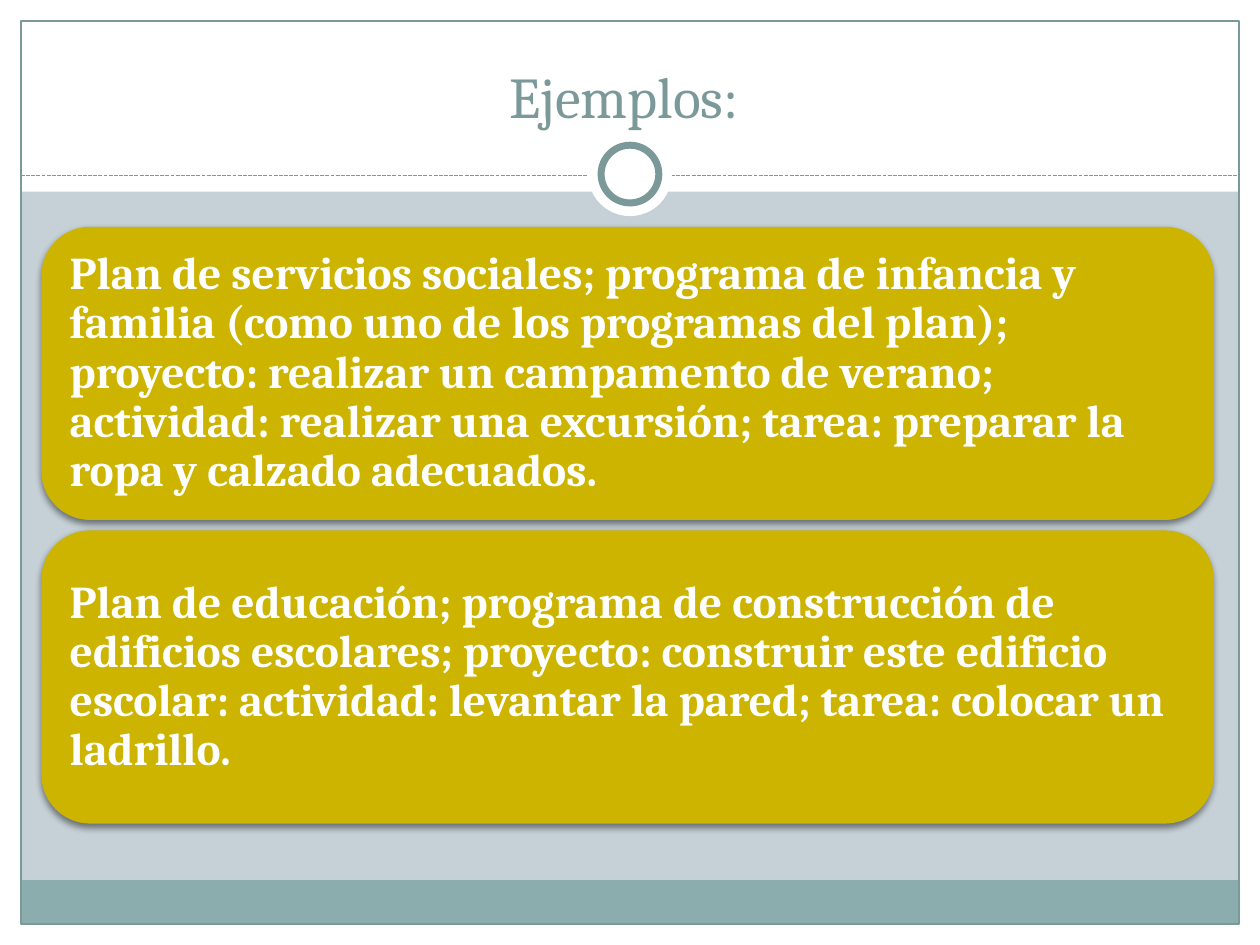
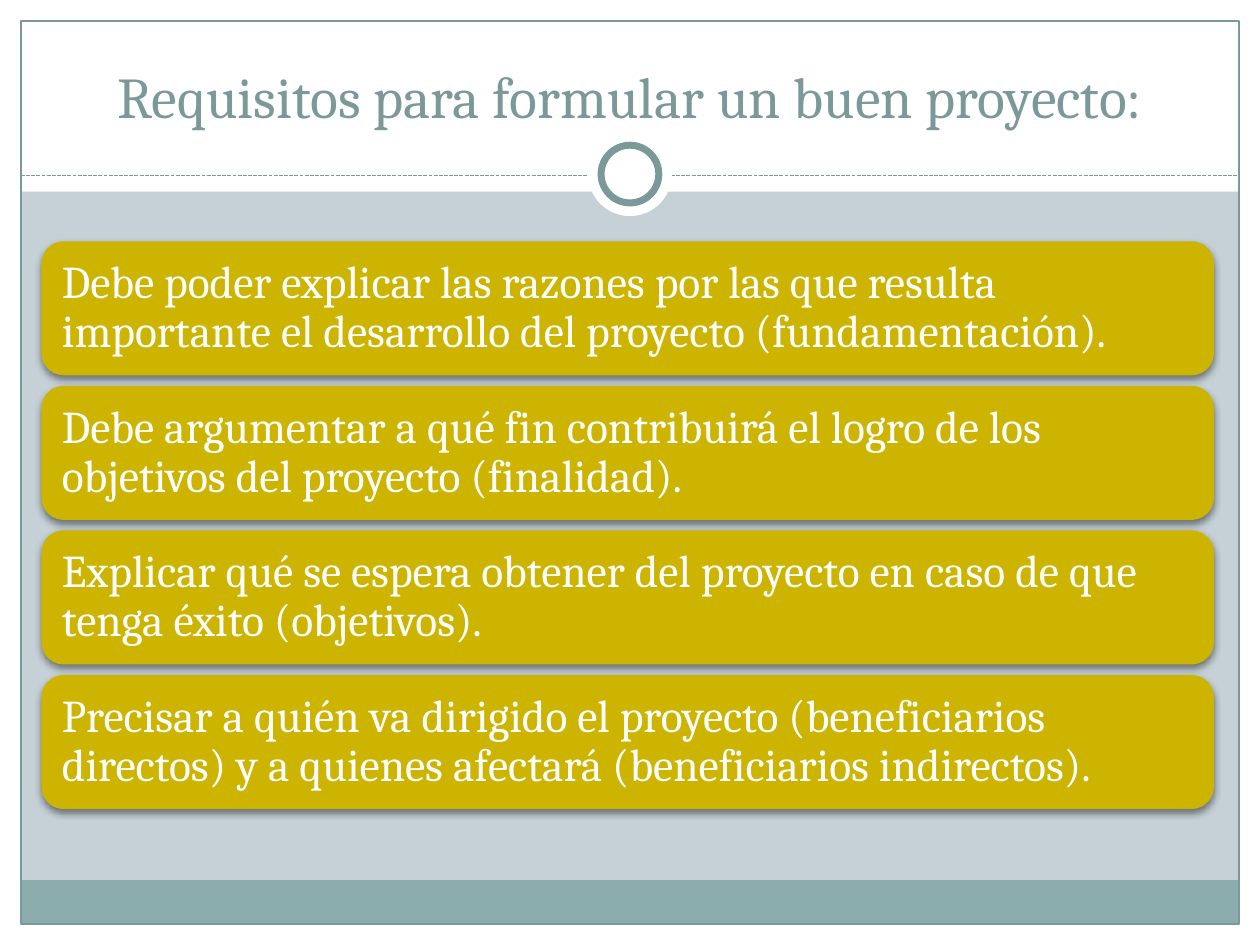
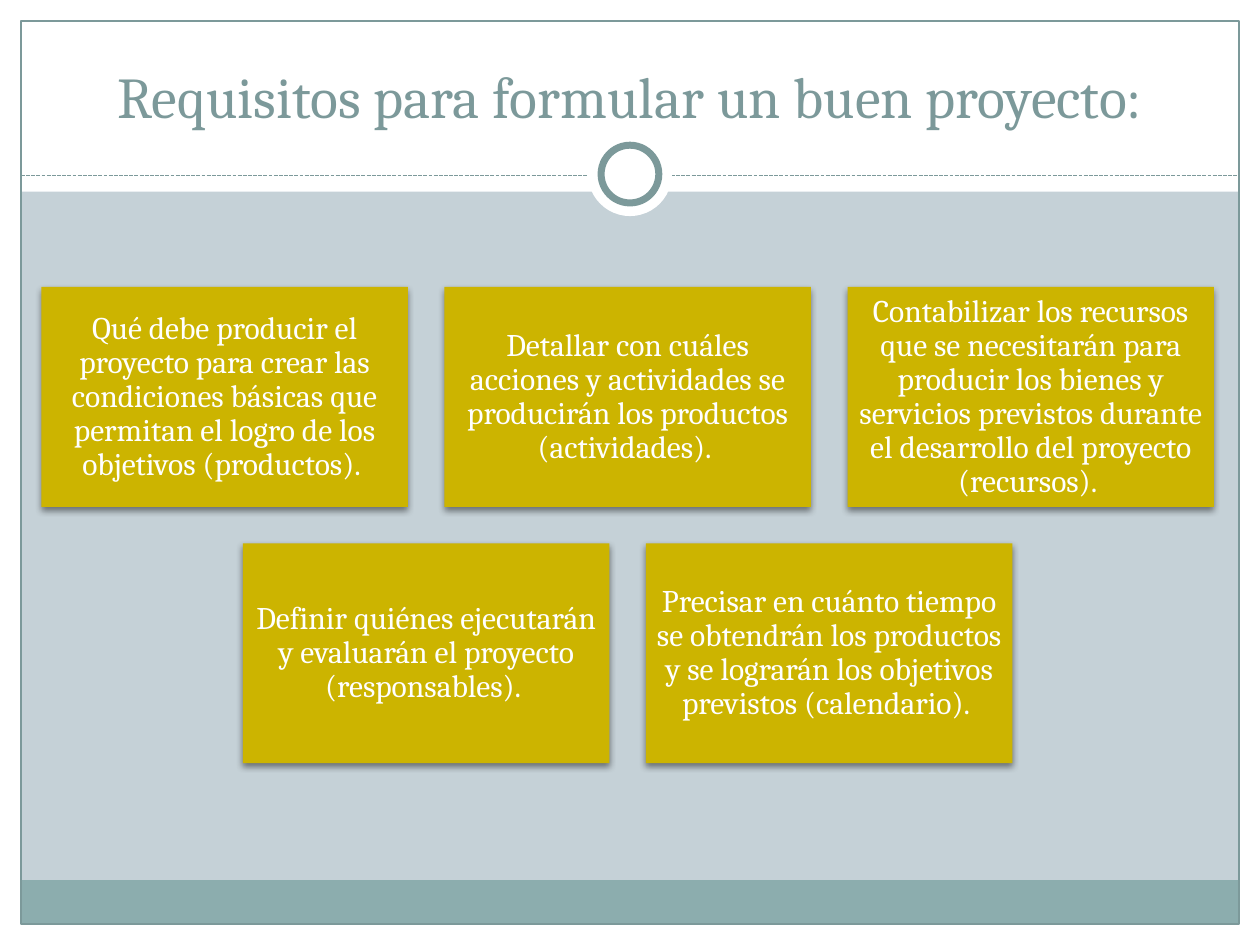
from lxml.etree import SubElement
from pptx import Presentation
from pptx.dml.color import RGBColor
from pptx.enum.dml import MSO_LINE
from pptx.enum.shapes import MSO_CONNECTOR, MSO_SHAPE
from pptx.enum.text import MSO_ANCHOR, PP_ALIGN
from pptx.oxml.ns import qn
from pptx.util import Pt

WHITE = RGBColor(0xFF, 0xFF, 0xFF)
MIST = RGBColor(0xC5, 0xD1, 0xD7)
TEAL = RGBColor(0x8C, 0xAD, 0xAE)
SLATE = RGBColor(0x7C, 0x99, 0x9A)
GOLD = RGBColor(0xCC, 0xB4, 0x00)
FONT = "Cambria"

WIDE, HIGH = 720, 540
EDGE = 12
LEFT, SPAN = 23.7, 670
MID = 300.1
GAP = 6

REQS = "Requisitos para formular un buen proyecto:"
PLANS = [
    "Plan de servicios sociales; programa de infancia y familia (como uno de los "
    "programas del plan); proyecto: realizar un campamento de verano; actividad: "
    "realizar una excursión; tarea: preparar la ropa y calzado adecuados.",
    "Plan de educación; programa de construcción de edificios escolares; proyecto: "
    "construir este edificio escolar: actividad: levantar la pared; tarea: colocar "
    "un ladrillo.",
]
AIMS = [
    "Debe poder explicar las razones por las que resulta importante el desarrollo "
    "del proyecto (fundamentación).",
    "Debe argumentar a qué fin contribuirá el logro de los objetivos del proyecto "
    "(finalidad).",
    "Explicar qué se espera obtener del proyecto en caso de que tenga éxito "
    "(objetivos).",
    "Precisar a quién va dirigido el proyecto (beneficiarios directos) y a quienes "
    "afectará (beneficiarios indirectos).",
]
NEEDS = [
    [
        "Qué debe producir el proyecto para crear las condiciones básicas que "
        "permitan el logro de los objetivos (productos). ",
        "Detallar con cuáles acciones y actividades se producirán los productos "
        "(actividades). ",
        "Contabilizar los recursos que se necesitarán para producir los bienes y "
        "servicios previstos durante el desarrollo del proyecto (recursos). ",
    ],
    [
        "Definir quiénes ejecutarán y evaluarán el proyecto (responsables). ",
        "Precisar en cuánto tiempo se obtendrán los productos y se lograrán los "
        "objetivos previstos (calendario). ",
    ],
]


def add_form(slide, kind, box, fill=None, line=None, width=0.75):
    form = slide.shapes.add_shape(kind, *map(Pt, box))
    form.shadow.inherit = False
    if fill is None:
        form.fill.background()
    else:
        form.fill.solid()
        form.fill.fore_color.rgb = fill
    if line is None:
        form.line.fill.background()
    else:
        form.line.color.rgb = line
        form.line.width = Pt(width)
    return form


def add_disc(slide, size, **style):
    """Add a white circle centred on the title rule."""
    box = (WIDE / 2 - size / 2, 99.5 - size / 2, size, size)
    add_form(slide, MSO_SHAPE.OVAL, box, WHITE, **style)


def add_rule(slide, y):
    rule = slide.shapes.add_connector(
        MSO_CONNECTOR.STRAIGHT, Pt(EDGE), Pt(y), Pt(WIDE - EDGE), Pt(y))
    rule.line.color.rgb = SLATE
    rule.line.width = Pt(0.75)
    rule.line.dash_style = MSO_LINE.SQUARE_DOT
    SubElement(rule.element.spPr, qn("a:effectLst"))


def write(frame, text, size, color, align, bold=False):
    frame.word_wrap = True
    par = frame.paragraphs[0]
    par.text = text
    par.alignment = align
    font = par.font
    font.name, font.size, font.bold = FONT, Pt(size), bold
    font.color.rgb = color
    return par


def add_title(slide, text):
    frame = slide.shapes.add_textbox(Pt(24), Pt(18), Pt(672), Pt(60)).text_frame
    frame.vertical_anchor = MSO_ANCHOR.BOTTOM
    write(frame, text, 33, SLATE, PP_ALIGN.CENTER)


def cast_shade(form):
    """Give a shape a soft shadow straight below it."""
    list_ = form.element.spPr.find(qn("a:effectLst"))
    shade = SubElement(list_, qn("a:outerShdw"), blurRad=str(Pt(4)),
                       dist=str(Pt(2)), dir="5400000", rotWithShape="0")
    black = SubElement(shade, qn("a:srgbClr"), val="000000")
    SubElement(black, qn("a:alpha"), val="45000")


def add_card(slide, kind, box, text, size, align, inset, bold=False):
    card = add_form(slide, kind, box, GOLD)
    cast_shade(card)
    frame = card.text_frame
    frame.vertical_anchor = MSO_ANCHOR.MIDDLE
    frame.margin_left = frame.margin_right = Pt(inset)
    frame.margin_top = frame.margin_bottom = Pt(inset)
    write(frame, text, size, WHITE, align, bold).line_spacing = 0.9


def add_stack(slide, texts, high, bold=False):
    """Stack full-width rounded cards around the middle of the body."""
    step = high + GAP
    top = MID - (len(texts) * step - GAP) / 2
    for row, text in enumerate(texts):
        box = (LEFT, top + row * step, SPAN, high)
        add_card(slide, MSO_SHAPE.ROUNDED_RECTANGLE, box, text, 26,
                 PP_ALIGN.LEFT, 8, bold)


def add_tiles(slide, rows):
    """Lay out rows of equal tiles, each row centred."""
    wide = SPAN / 3.2
    high, gap = wide * 0.6, wide * 0.1
    top = MID - (len(rows) * (high + gap) - gap) / 2
    for row, texts in enumerate(rows):
        left = LEFT + (SPAN - len(texts) * (wide + gap) + gap) / 2
        for col, text in enumerate(texts):
            box = (left + col * (wide + gap), top + row * (high + gap), wide, high)
            add_card(slide, MSO_SHAPE.RECTANGLE, box, text, 18,
                     PP_ALIGN.CENTER, 5)


def add_slide(deck, title):
    """Add a slide with the shared frame, bands, ring and title."""
    slide = deck.slides.add_slide(deck.slide_layouts[6])
    back = slide.background.fill
    back.solid()
    back.fore_color.rgb = MIST
    inner = WIDE - 2 * EDGE
    bands = [
        ((0, HIGH - EDGE, WIDE, EDGE), WHITE),
        ((0, 0, WIDE, 109.5), WHITE),
        ((0, 0, EDGE, HIGH), WHITE),
        ((WIDE - EDGE, 0, EDGE, HIGH), WHITE),
        ((EDGE, 503, inner, 25), TEAL),
    ]
    for box, fill in bands:
        add_form(slide, MSO_SHAPE.RECTANGLE, box, fill)
    add_form(slide, MSO_SHAPE.RECTANGLE, (EDGE, EDGE, inner, HIGH - 2 * EDGE),
             line=SLATE)
    add_rule(slide, 100.5)
    add_disc(slide, 48)
    add_disc(slide, 33, line=SLATE, width=4)
    add_title(slide, title)
    return slide


def main():
    deck = Presentation()
    deck.slide_width, deck.slide_height = Pt(WIDE), Pt(HIGH)
    add_stack(add_slide(deck, "Ejemplos: "), PLANS, 167.5, bold=True)
    add_stack(add_slide(deck, REQS), AIMS, 76.6)
    add_tiles(add_slide(deck, REQS), NEEDS)
    deck.save("out.pptx")


if __name__ == "__main__":
    main()
